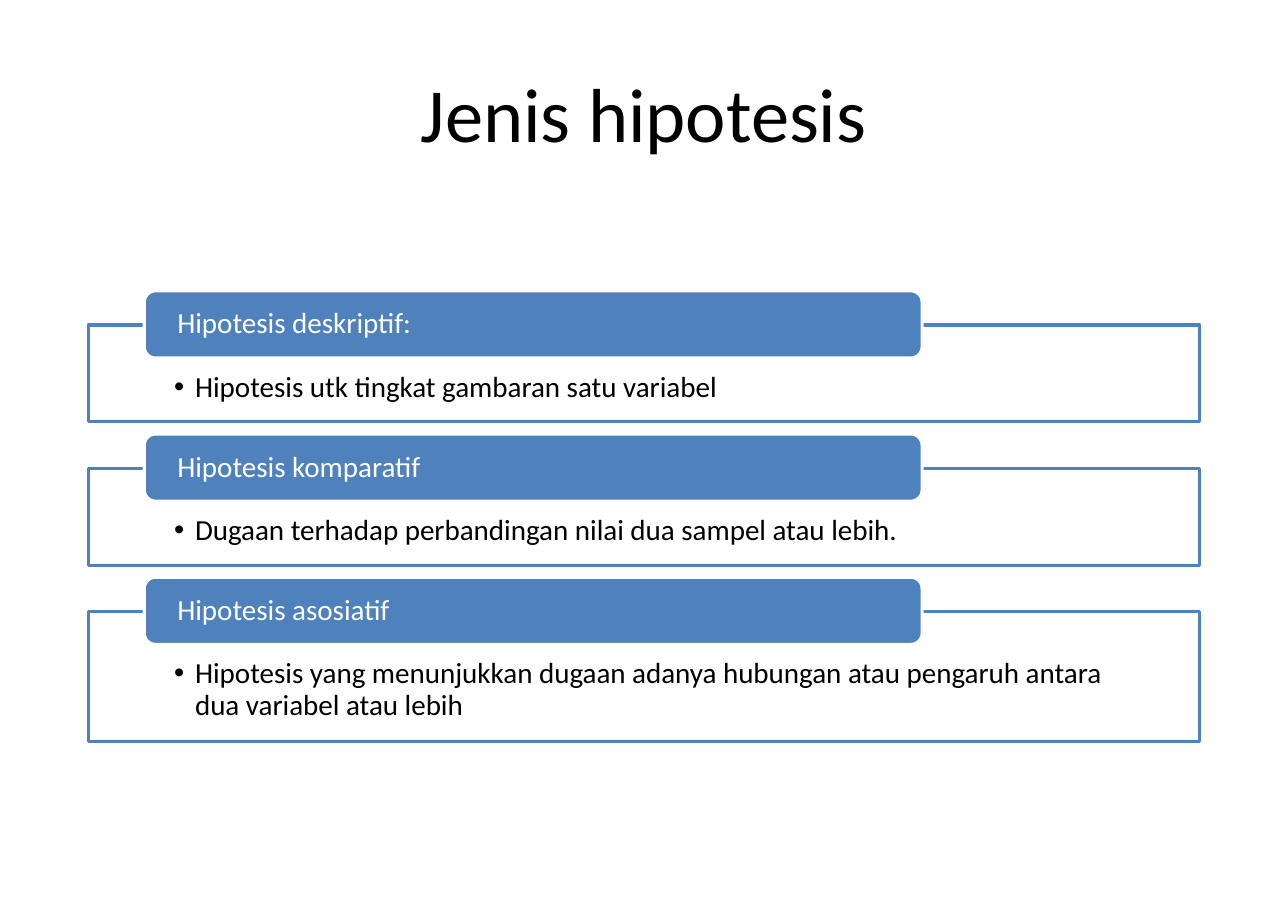
from lxml.etree import SubElement as Sub
from pptx import Presentation
from pptx.dml.color import RGBColor
from pptx.enum.shapes import MSO_SHAPE as Shape
from pptx.enum.text import MSO_ANCHOR as Anchor, PP_ALIGN as Align
from pptx.oxml.ns import qn
from pptx.util import Pt

PX = 9144  # 100 px to the inch
BLUE = RGBColor(0x4F, 0x81, 0xBD)
WHITE = RGBColor(0xFF, 0xFF, 0xFF)
BLACK = RGBColor(0, 0, 0)

TOP, STEP, RISE = 295, 130, 31
TYPES = [
    ("Hipotesis deskriptif:", "Hipotesis utk tingkat gambaran satu variabel", 88),
    ("Hipotesis komparatif",
     "Dugaan terhadap perbandingan nilai dua sampel atau lebih.", 88),
    ("Hipotesis asosiatif",
     "Hipotesis yang menunjukkan dugaan adanya hubungan atau pengaruh antara "
     "dua variabel atau lebih", 118),
]


def apply(item, values):
    for name, value in values.items():
        setattr(item, name, value)


def place(item, left, top, width, height):
    apply(item, dict(left=left * PX, top=top * PX,
                     width=width * PX, height=height * PX))


def write(item, text, size, color, align, anchor, pads):
    """Fill in the text; pads are the left, top, right and bottom insets in px."""
    frame = item.text_frame
    frame.text = text
    sides = ("margin_left", "margin_top", "margin_right", "margin_bottom")
    apply(frame, dict(zip(sides, [pad * PX for pad in pads])))
    apply(frame, dict(word_wrap=True, vertical_anchor=anchor))
    para = frame.paragraphs[0]
    para.alignment = align
    apply(para.runs[0].font, dict(name="Calibri", size=Pt(size)))
    para.runs[0].font.color.rgb = color
    return para


def panel(slide, kind, spot, fill, line):
    item = slide.shapes.add_shape(kind, *[n * PX for n in spot])
    item.shadow.inherit = False
    item.fill.solid()
    item.fill.fore_color.rgb = fill
    item.line.color.rgb = line
    item.line.width = Pt(2)
    return item


def bullet(para, indent):
    props = para._p.get_or_add_pPr()
    props.set("marL", str(indent * PX))
    props.set("indent", str(-indent * PX))
    Sub(props, qn("a:buFont"), typeface="Arial")
    Sub(props, qn("a:buChar"), char="•")


def detail(slide, text, top, height):
    box = panel(slide, Shape.RECTANGLE, (80, top, 1009, height), WHITE, BLUE)
    para = write(box, text, 19, BLACK, Align.LEFT, Anchor.TOP, (78, 43, 78, 15))
    bullet(para, 19)
    para.line_spacing = 0.9


def label(slide, text, top):
    tab = panel(slide, Shape.ROUNDED_RECTANGLE, (131, top, 706, 61), BLUE, WHITE)
    para = write(tab, text, 19, WHITE, Align.LEFT, Anchor.MIDDLE, (27, 0, 27, 0))
    para.line_spacing = 0.9


def main():
    deck = Presentation()
    apply(deck, dict(slide_width=1169 * PX, slide_height=827 * PX))
    slide = deck.slides.add_slide(deck.slide_layouts[5])
    title = slide.shapes.title
    place(title, 58, 33, 1053, 138)
    write(title, "Jenis hipotesis", 50, BLACK, Align.CENTER, Anchor.MIDDLE,
          (11, 6, 11, 6))
    for row, (name, text, height) in enumerate(TYPES):
        top = TOP + row * STEP
        detail(slide, text, top, height)
        label(slide, name, top - RISE)
    deck.save("out.pptx")


if __name__ == "__main__":
    main()
